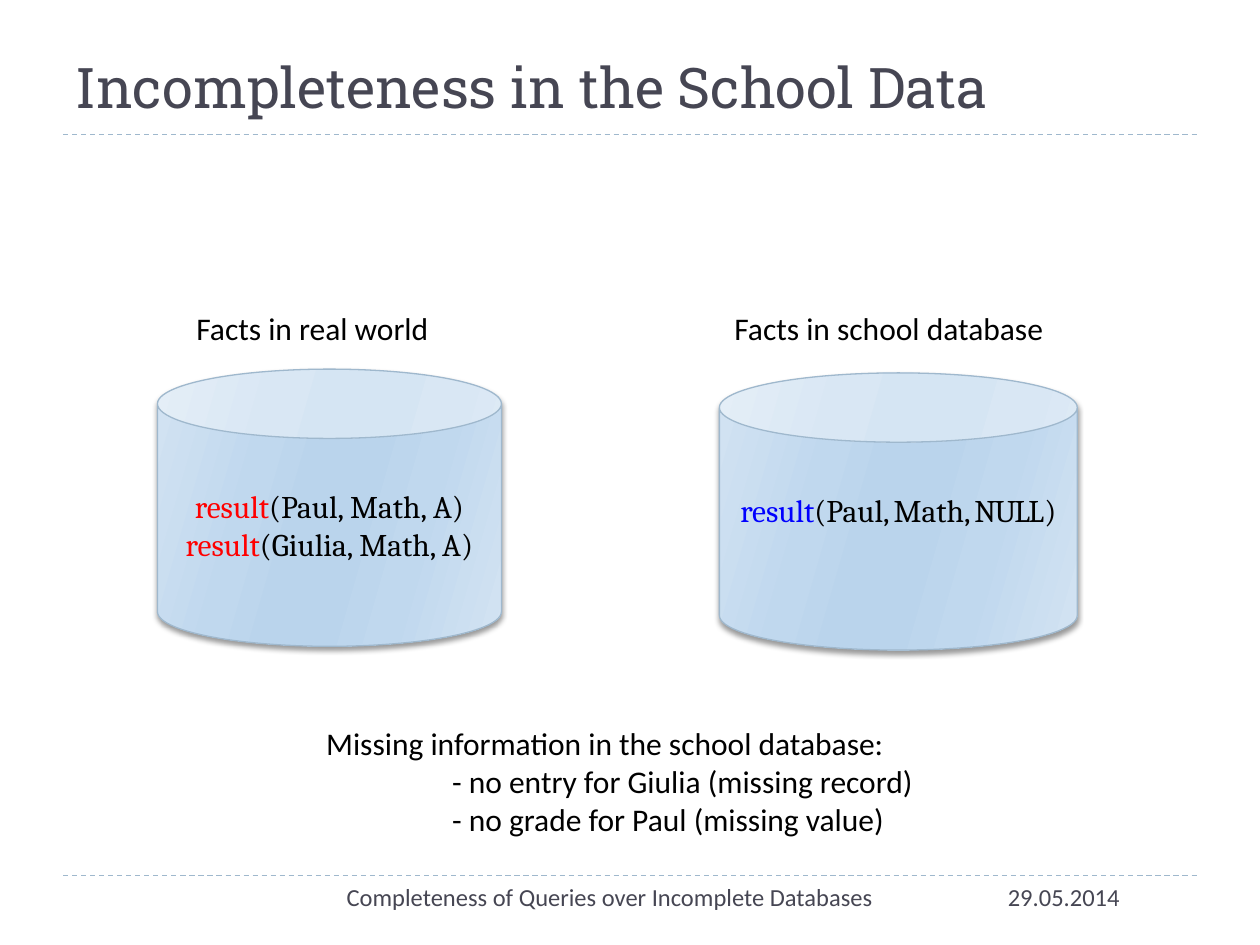
import lxml.etree
import pptx
import pptx.dml.color
import pptx.enum.dml
import pptx.enum.shapes
import pptx.enum.text
import pptx.oxml.ns
import pptx.util

Inches = pptx.util.Inches
Pt = pptx.util.Pt
qn = pptx.oxml.ns.qn
Align = pptx.enum.text.PP_ALIGN
Anchor = pptx.enum.text.MSO_ANCHOR

BLACK, RED, BLUE, SLATE, OUTLINE = "000000", "FF0000", "0000FF", "464653", "9FB8CD"
CAN_STOPS = [(0, "D3E3F2"), (30, "C0D8EE"), (45, "BAD4EC"),
             (55, "BAD4EC"), (73, "C0D8EE"), (100, "D3E3F2")]


def color(value):
    return pptx.dml.color.RGBColor.from_string(value)


def add_color(parent, value):
    return lxml.etree.SubElement(parent, qn("a:srgbClr"), val=value)


def add_span(para, text, size=18, font="Calibri", ink=BLACK, spacing=None):
    span = para.add_run()
    span.text = text
    span.font.size = Pt(size)
    span.font.name = font
    span.font.color.rgb = color(ink)
    if spacing is not None:
        span.font._element.set("spc", str(spacing * 100))


def next_para(frame, index):
    return frame.add_paragraph() if index else frame.paragraphs[0]


def add_text(page, left, top, width, height, lines, align=Align.LEFT,
             anchor=Anchor.TOP, indent=0, **style):
    box = page.shapes.add_textbox(Inches(left), Inches(top), Inches(width), Inches(height))
    frame = box.text_frame
    frame.word_wrap = True
    frame.vertical_anchor = anchor
    for index, line in enumerate(lines):
        para = next_para(frame, index)
        para.alignment = align
        if index and indent:
            para._p.get_or_add_pPr().set("marL", str(Inches(indent)))
        add_span(para, line, **style)


def add_rule(page, top):
    rule = page.shapes.add_connector(pptx.enum.shapes.MSO_CONNECTOR.STRAIGHT,
                                     Inches(0.5), Inches(top), Inches(9.5), Inches(top))
    rule.line.color.rgb = color(OUTLINE)
    rule.line.width = Pt(0.75)
    rule.line.dash_style = pptx.enum.dml.MSO_LINE.DASH
    lxml.etree.SubElement(rule._element.spPr, qn("a:effectLst"))


def add_gradient(shape, stops, angle):
    shape.fill.gradient()
    shape.fill.gradient_angle = 360 - angle
    stop_list = shape._element.spPr.find(".//" + qn("a:gsLst"))
    for stop in list(stop_list):
        stop_list.remove(stop)
    for position, value in stops:
        add_color(lxml.etree.SubElement(stop_list, qn("a:gs"), pos=str(position * 1000)), value)


def add_shadow(shape):
    shape.shadow.inherit = False
    effects = shape._element.spPr.find(qn("a:effectLst"))
    shadow = lxml.etree.SubElement(effects, qn("a:outerShdw"), blurRad=str(Pt(3)),
                                   dist=str(Pt(2)), dir="5400000", rotWithShape="0")
    lxml.etree.SubElement(add_color(shadow, BLACK), qn("a:alpha"), val="40000")


def add_database(page, left, top, width, facts, bottom_inset=0.05):
    can = page.shapes.add_shape(pptx.enum.shapes.MSO_SHAPE.CAN, Inches(left), Inches(top),
                                Inches(width), Inches(2.2))
    add_gradient(can, CAN_STOPS, 16)
    can.line.color.rgb = color(OUTLINE)
    can.line.width = Pt(0.75)
    add_shadow(can)
    frame = can.text_frame
    frame.word_wrap = True
    frame.vertical_anchor = Anchor.MIDDLE
    frame.margin_bottom = Inches(bottom_inset)
    for index, fact in enumerate(facts):
        para = next_para(frame, index)
        para.alignment = Align.CENTER
        for text, style in fact:
            add_span(para, text, font="Cambria", **style)


def main():
    deck = pptx.Presentation()
    deck.slide_width, deck.slide_height = Inches(10), Inches(7.5)
    page = deck.slides.add_slide(deck.slide_layouts[6])

    for top in (6.95, 1.07):
        add_rule(page, top)
    add_text(page, 0.5, 0.17, 9, 0.83, ["Incompleteness in the School Data"],
             anchor=Anchor.BOTTOM, size=32, font="Roboto Slab", ink=SLATE)

    real_facts = [[("result", {"ink": RED}), (f"({name}, Math, A)", {})]
                  for name in ("Paul", "Giulia")]
    stored_fact = [("result", {"ink": BLUE}), ("(Paul,", {}), (" ", {"size": 10.5}),
                   ("Math,", {}), (" ", {"size": 10}), ("NULL", {"spacing": -1}),
                   (")", {"spacing": 0})]
    add_database(page, 1.25, 2.93, 2.73, real_facts)
    add_database(page, 5.71, 2.96, 2.84, [stored_fact], bottom_inset=0.35)

    add_text(page, 1.46, 2.4, 3.78, 0.4, ["Facts in real world"])
    add_text(page, 5.73, 2.4, 3.28, 0.4, ["Facts in school database"])
    add_text(page, 2.49, 5.7, 5.97, 1.01,
             ["Missing information in the school database:",
              "- no entry for Giulia (missing record)",
              "- no grade for Paul (missing value)"], indent=1)

    add_text(page, 7.9, 6.95, 1.98, 0.4, ["29.05.2014"], size=14, ink=SLATE)
    add_text(page, 2.24, 6.95, 5.2, 0.4, ["Completeness of Queries over Incomplete Databases"],
             align=Align.CENTER, size=14, ink=SLATE)
    deck.save("out.pptx")


if __name__ == "__main__":
    main()
